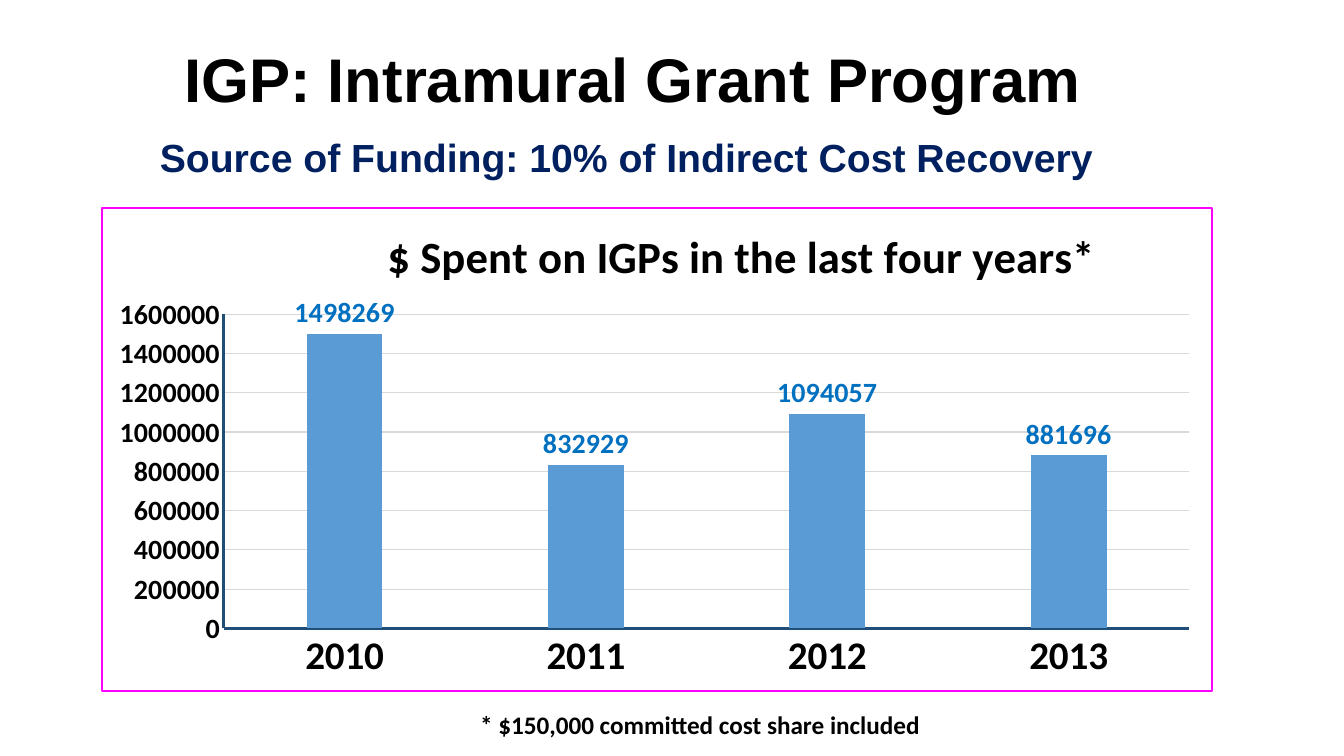
from lxml import etree
from pptx import Presentation
from pptx.chart.data import CategoryChartData
from pptx.dml.color import RGBColor
from pptx.enum.chart import XL_CHART_TYPE, XL_LABEL_POSITION, XL_TICK_MARK
from pptx.enum.text import MSO_ANCHOR, PP_ALIGN
from pptx.oxml import parse_xml
from pptx.oxml.ns import nsdecls, qn
from pptx.util import Cm, Pt

COLUMNS = XL_CHART_TYPE.COLUMN_CLUSTERED
OUTSIDE_END = XL_LABEL_POSITION.OUTSIDE_END
NO_TICK = XL_TICK_MARK.NONE
LEFT, CENTER = PP_ALIGN.LEFT, PP_ALIGN.CENTER
TOP, MIDDLE = MSO_ANCHOR.TOP, MSO_ANCHOR.MIDDLE

BLACK = RGBColor(0x00, 0x00, 0x00)
NAVY = RGBColor(0x00, 0x20, 0x60)
AXIS_BLUE = RGBColor(0x1F, 0x4E, 0x79)
BAR_BLUE = RGBColor(0x5B, 0x9B, 0xD5)
LABEL_BLUE = RGBColor(0x00, 0x70, 0xC0)
GRID_GRAY = RGBColor(0xD9, 0xD9, 0xD9)
MAGENTA = RGBColor(0xFF, 0x00, 0xFF)

SPENDING = {"2010": 1498269, "2011": 832929, "2012": 1094057, "2013": 881696}


class SlideBuilder:
    heading_font = "Arial"
    body_font = "Calibri"

    def __init__(self, slide):
        self.slide = slide

    def style_font(self, font, size, color=BLACK, name=body_font):
        font.name = name
        font.size = Pt(size)
        font.bold = True
        font.color.rgb = color

    def style_line(self, line, color, width):
        line.color.rgb = color
        line.width = Pt(width)

    def text(self, words, frame, size, color=BLACK, name=body_font,
             align=CENTER, anchor=TOP, wrap=True, spacing=1.0):
        box = self.slide.shapes.add_textbox(*map(Cm, frame))
        box.text_frame.word_wrap = wrap
        box.text_frame.vertical_anchor = anchor
        para = box.text_frame.paragraphs[0]
        para.alignment = align
        para.line_spacing = spacing
        span = para.add_run()
        span.text = words
        self.style_font(span.font, size, color, name)

    def place(self, chart, part, index, **fractions):
        """Fix a chart part at fractions of the chart area."""
        element = chart.element.find(".//" + qn(f"c:{part}"))
        old_layout = element.find(qn("c:layout"))
        if old_layout is not None:
            element.remove(old_layout)
        layout = etree.Element(qn("c:layout"))
        element.insert(index, layout)
        manual = etree.SubElement(layout, qn("c:manualLayout"))
        for tag, value in fractions.items():
            etree.SubElement(manual, qn(f"c:{tag}")).set("val", str(value))

    def border(self, chart, color, width):
        frame = parse_xml(
            f'<c:spPr {nsdecls("c", "a")}><a:noFill/><a:ln w="{Pt(width)}">'
            f'<a:solidFill><a:srgbClr val="{color}"/></a:solidFill></a:ln></c:spPr>')
        chart.element.find(qn("c:chart")).addnext(frame)

    def axis(self, axis, size):
        axis.major_tick_mark = NO_TICK
        axis.minor_tick_mark = NO_TICK
        self.style_font(axis.tick_labels.font, size)
        self.style_line(axis.format.line, AXIS_BLUE, 2.25)

    def column_chart(self, title, values, frame):
        data = CategoryChartData()
        data.categories = list(values)
        data.add_series("Series 1", list(values.values()))
        chart = self.slide.shapes.add_chart(COLUMNS, *map(Cm, frame), data).chart
        self.style_font(chart.font, 20)
        chart.has_legend = False
        self.border(chart, MAGENTA, 1.5)

        # Chart title, to the right of the centre
        span = chart.chart_title.text_frame.paragraphs[0].add_run()
        span.text = title
        self.style_font(span.font, 32)
        self.place(chart, "title", 1, xMode="edge", yMode="edge", x=0.25, y=0.02)

        # Axes and gridlines
        self.axis(chart.category_axis, 28)
        self.axis(chart.value_axis, 20)
        chart.value_axis.minimum_scale = 0
        chart.value_axis.maximum_scale = 1600000
        chart.value_axis.major_unit = 200000
        self.style_line(chart.value_axis.major_gridlines.format.line, GRID_GRAY, 0.75)

        # Plot area
        self.place(chart, "plotArea", 0, layoutTarget="inner", xMode="edge",
                   yMode="edge", x=0.11, y=0.22, w=0.87, h=0.65)

        # Columns and their values
        plot = chart.plots[0]
        plot.vary_by_categories = False
        plot.gap_width = 219
        plot.overlap = -27
        series = plot.series[0]
        series.format.fill.solid()
        series.format.fill.fore_color.rgb = BAR_BLUE
        labels = series.data_labels
        labels.show_value = True
        labels.position = OUTSIDE_END
        self.style_font(labels.font, 20, LABEL_BLUE)


def main():
    deck = Presentation()
    deck.slide_width, deck.slide_height = Cm(33.87), Cm(19.05)
    page = SlideBuilder(deck.slides.add_slide(deck.slide_layouts[6]))

    # Spending chart
    page.column_chart("$ Spent on IGPs in the last four years*", SPENDING,
                      (2.54, 5.21, 28.02, 12.24))

    # Headings
    page.text("IGP: Intramural Grant Program", (1.35, 0.25, 29.21, 3.68), 44,
              name=page.heading_font, anchor=MIDDLE, spacing=0.9)
    page.text("Source of Funding: 10% of Indirect Cost Recovery",
              (3.78, 3.23, 24.31, 1.45), 28, NAVY, page.heading_font,
              align=LEFT, wrap=False)

    # Footnote
    page.text("* $150,000 committed cost share included",
              (7.98, 17.75, 19.33, 1.02), 18)
    deck.save("out.pptx")


if __name__ == "__main__":
    main()
